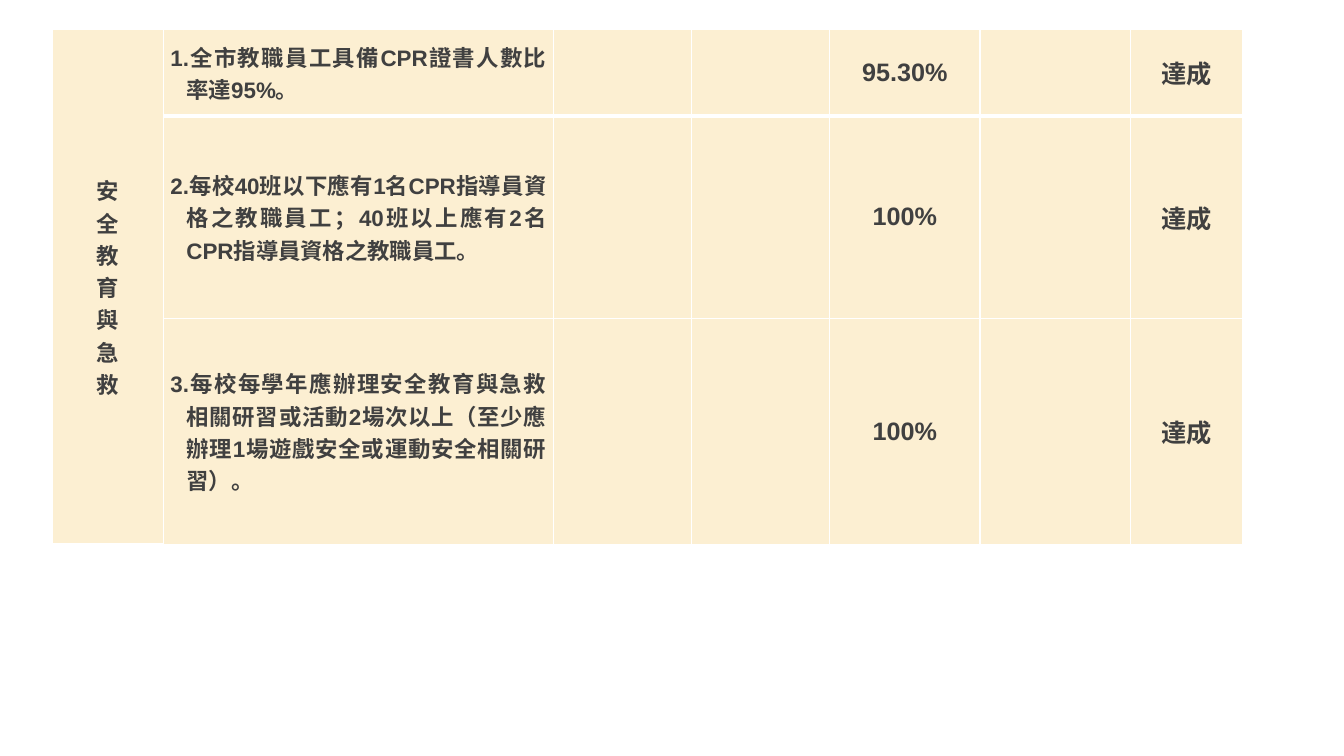
from lxml.etree import SubElement
from pptx import Presentation
from pptx.dml.color import RGBColor
from pptx.enum.text import MSO_ANCHOR, PP_ALIGN
from pptx.oxml.ns import qn
from pptx.util import Inches, Pt

TOPIC = "安全教育與急救"
GOALS = [
    ("1.全市教職員工具備CPR證書人數比率達95%。", "95.30%", "達成"),
    ("2.每校40班以下應有1名CPR指導員資格之教職員工；40班以上應有2名CPR指導員資格之教職員工。", "100%", "達成"),
    ("3.每校每學年應辦理安全教育與急救相關研習或活動2場次以上（至少應辦理1場遊戲安全或運動安全相關研習）。", "100%", "達成"),
]
COLUMN_WIDTHS = [1.1, 3.87, 1.37, 1.37, 1.49, 1.49, 1.12]
ROW_HEIGHTS = [0.86, 2.01, 2.01]
TOPIC_COLUMN, GOAL_COLUMN, RATE_COLUMN, RESULT_COLUMN = 0, 1, 4, 6
LEFT, TOP = 0.52, 0.29
HANGING = 0.16
CREAM, WHITE, GRAY = "FCEFD2", "FFFFFF", "404040"


def color(value):
    return RGBColor.from_string(value)


def style_cell(cell, bottom_width):
    properties = cell._tc.get_or_add_tcPr()
    for side, width in (("L", 1), ("R", 1), ("T", 1), ("B", bottom_width)):
        line = SubElement(properties, qn(f"a:ln{side}"), w=str(Pt(width)))
        fill = SubElement(line, qn("a:solidFill"))
        SubElement(fill, qn("a:srgbClr"), val=WHITE)
    cell.fill.solid()
    cell.fill.fore_color.rgb = color(CREAM)
    cell.vertical_anchor = MSO_ANCHOR.MIDDLE
    cell.margin_left = cell.margin_right = Inches(0.07)
    cell.margin_top = cell.margin_bottom = 0


def write(cell, lines, size=16, align=PP_ALIGN.CENTER, hanging=()):
    frame = cell.text_frame
    for index, text in enumerate(lines):
        paragraph = frame.add_paragraph() if index else frame.paragraphs[0]
        paragraph.alignment = align
        if index in hanging:
            properties = paragraph._p.get_or_add_pPr()
            properties.set("marL", str(Inches(HANGING)))
            properties.set("indent", str(-Inches(HANGING)))
        run = paragraph.add_run()
        run.text = text
        run.font.name = "Arial"
        run.font.size = Pt(size)
        run.font.bold = True
        run.font.color.rgb = color(GRAY)


presentation = Presentation()
presentation.slide_width = Inches(13.33)
presentation.slide_height = Inches(7.5)
slide = presentation.slides.add_slide(presentation.slide_layouts[6])

table = slide.shapes.add_table(
    len(ROW_HEIGHTS), len(COLUMN_WIDTHS), Inches(LEFT), Inches(TOP),
    Inches(sum(COLUMN_WIDTHS)), Inches(sum(ROW_HEIGHTS)),
).table
table.first_row = table.horz_banding = False
for column, width in zip(table.columns, COLUMN_WIDTHS):
    column.width = Inches(width)

for row_index, (row, height) in enumerate(zip(table.rows, ROW_HEIGHTS)):
    row.height = Inches(height)
    for cell in row.cells:
        style_cell(cell, bottom_width=1 if row_index else 3)

table.cell(0, TOPIC_COLUMN).merge(table.cell(len(GOALS) - 1, TOPIC_COLUMN))
write(table.cell(0, TOPIC_COLUMN), TOPIC, hanging=range(1, len(TOPIC) - 1))
for row_index, (goal, rate, result) in enumerate(GOALS):
    write(table.cell(row_index, GOAL_COLUMN), [goal], align=PP_ALIGN.JUSTIFY, hanging=[0])
    write(table.cell(row_index, RATE_COLUMN), [rate], size=18)
    write(table.cell(row_index, RESULT_COLUMN), [result], size=18)

presentation.save("out.pptx")
